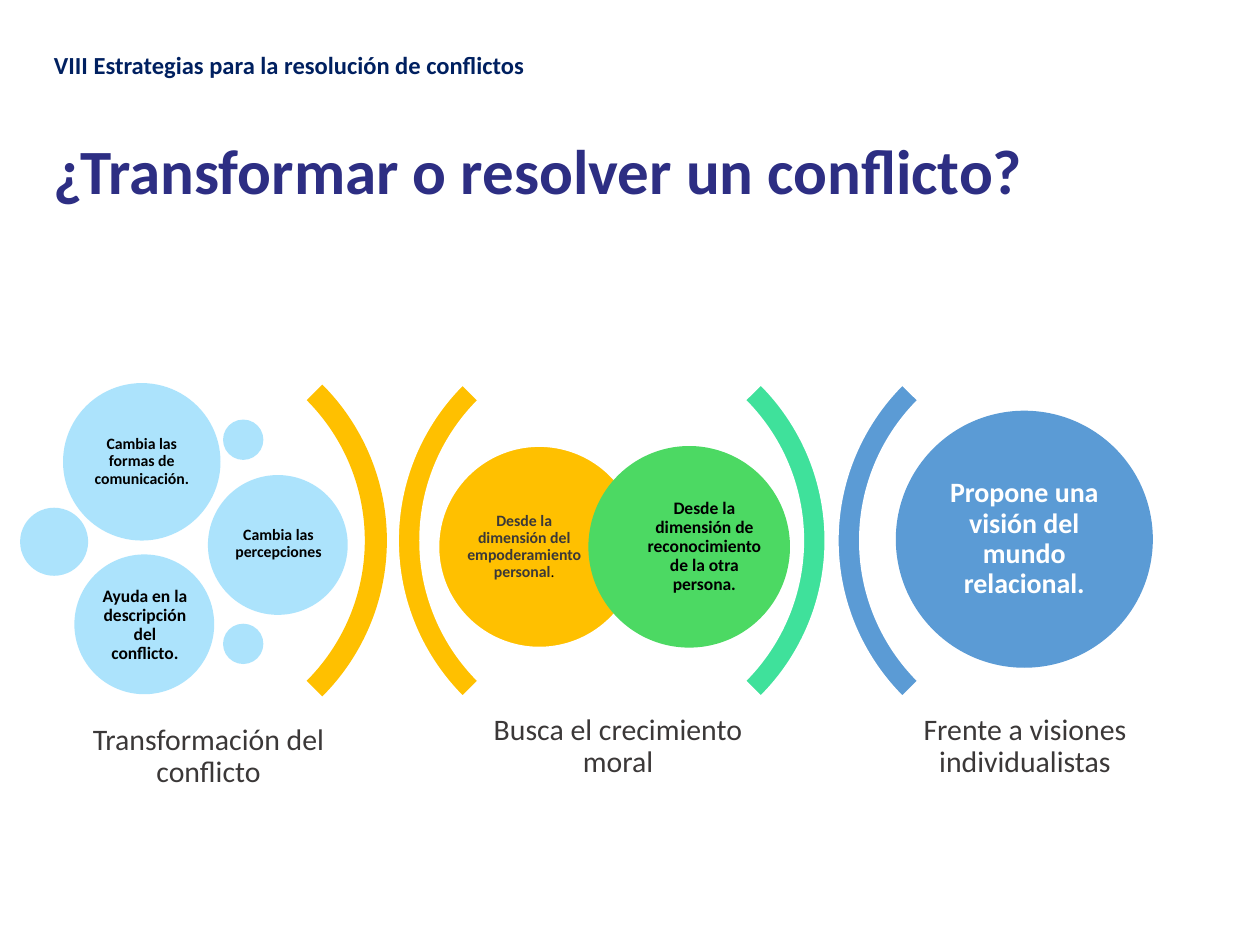
import pptx
import pptx.dml.color
import pptx.enum.shapes
import pptx.enum.text
import pptx.oxml
import pptx.oxml.ns
import pptx.util
from pptx.util import Inches

THEME = {
    "font": "Calibri",
    "title": "2D2E83", "section": "002060", "caption": "3B3838",
    "black": "000000", "white": "FFFFFF",
    "amber": "FFC000", "mint": "3FE19B", "blue": "5B9BD5",
    "green": "4CD963", "sky": "5AC9FB",
    "title_size": 36, "section_size": 14, "caption_size": 17,
    "large": 16, "medium": 10, "small": 9,
}

ARC_SIZE, ARC_TOP = 3.5, 2.54
# left, rotation, colour, white outline
ARCS = [
    (-0.43, 90, "amber", False),
    (3.16, 270, "amber", True),
    (3.05, 90, "mint", True),
    (6.65, 270, "blue", True),
]

# left, top, diameter, colour, opacity percentage, white outline
CIRCLES = [
    (3.48, 3.54, 1.6, "amber", 100, True),
    (4.67, 3.54, 1.6, "green", 100, False),
    (0.5, 3.04, 1.25, "sky", 50, False),
    (0.16, 4.03, 0.54, "sky", 50, False),
    (1.77, 3.33, 0.32, "sky", 50, False),
    (1.65, 3.77, 1.11, "sky", 50, False),
    (1.77, 4.95, 0.32, "sky", 50, False),
    (0.59, 4.4, 1.11, "sky", 50, False),
    (7.11, 3.26, 2.04, "blue", 100, False),
]

# text runs, box, size, colour, inset
CIRCLE_LABELS = [
    ([("Desde la dimensión del empoderamiento personal", "caption", True),
      (".", "black", False)], (3.7, 3.73, 0.92, 1.22), "small", 0),
    ([("Desde la dimensión de reconocimiento de la otra persona.", "black", True)],
     (5.13, 3.73, 0.92, 1.22), "medium", 0),
    ([("Cambia las formas de comunicación.", "black", True)],
     (0.68, 3.22, 0.89, 0.89), "small", 0.04),
    ([("Cambia las percepciones", "black", True)],
     (1.82, 3.93, 0.78, 0.78), "small", 0.04),
    ([("Ayuda en la descripción del conflicto.", "black", True)],
     (0.76, 4.57, 0.78, 0.78), "medium", 0.04),
    ([("Propone una visión del mundo relacional.", "white", True)],
     (7.41, 3.56, 1.44, 1.44), "large", 0.07),
]

CAPTIONS = [
    ("Transformación del conflicto", 0.33, 5.66),
    ("Busca el crecimiento moral", 3.58, 5.58),
    ("Frente a visiones individualistas", 6.81, 5.58),
]
CAPTION_WIDTH, CAPTION_HEIGHT = 2.65, 0.7


def color(name):
    return pptx.dml.color.RGBColor.from_string(THEME[name])


def add_text(slide, runs, box, size, inset=None, centered=True,
             middle=True, line_spacing=0.9):
    """Add a text box; runs are (text, colour name, bold) tuples."""
    shape = slide.shapes.add_textbox(*map(Inches, box))
    frame = shape.text_frame
    frame.word_wrap = True
    if middle:
        frame.vertical_anchor = pptx.enum.text.MSO_ANCHOR.MIDDLE
    if inset is not None:
        frame.margin_left = frame.margin_right = Inches(inset)
        frame.margin_top = frame.margin_bottom = Inches(inset)
    paragraph = frame.paragraphs[0]
    paragraph.line_spacing = line_spacing
    if centered:
        paragraph.alignment = pptx.enum.text.PP_ALIGN.CENTER
    for text, color_name, bold in runs:
        run = paragraph.add_run()
        run.text = text
        run.font.name = THEME["font"]
        run.font.size = pptx.util.Pt(THEME[size])
        run.font.bold = bold
        run.font.color.rgb = color(color_name)


def add_filled_shape(slide, kind, box, fill, opacity=100, outlined=False):
    shape = slide.shapes.add_shape(kind, *map(Inches, box))
    shape.shadow.inherit = False
    shape.fill.solid()
    shape.fill.fore_color.rgb = color(fill)
    if opacity < 100:
        fill_color = shape._element.spPr.find(".//" + pptx.oxml.ns.qn("a:srgbClr"))
        alpha = pptx.oxml.parse_xml(
            f'<a:alpha {pptx.oxml.ns.nsdecls("a")} val="{opacity * 1000}"/>')
        fill_color.append(alpha)
    if outlined:
        shape.line.color.rgb = color("white")
        shape.line.width = pptx.util.Pt(1)
    else:
        shape.line.fill.background()
    return shape


def main():
    presentation = pptx.Presentation()
    presentation.slide_width = Inches(10)
    presentation.slide_height = Inches(7.5)
    slide = presentation.slides.add_slide(presentation.slide_layouts[6])
    shape_kinds = pptx.enum.shapes.MSO_SHAPE

    add_text(slide, [("¿Transformar o resolver un conflicto?", "title", True)],
             (0.33, 0.66, 8.62, 1.45), "title_size", centered=False)
    add_text(slide, [("VIII Estrategias para la resolución de conflictos", "section", True)],
             (0.33, 0.35, 4.94, 0.34), "section_size",
             centered=False, middle=False, line_spacing=1.0)

    for left, rotation, fill, outlined in ARCS:
        arc = add_filled_shape(slide, shape_kinds.BLOCK_ARC,
                               (left, ARC_TOP, ARC_SIZE, ARC_SIZE), fill, outlined=outlined)
        arc.rotation = rotation
        # Start angle, end angle and band thickness of the arc
        for index, value in enumerate((135, 189, 0.05)):
            arc.adjustments[index] = value

    for left, top, diameter, fill, opacity, outlined in CIRCLES:
        add_filled_shape(slide, shape_kinds.OVAL, (left, top, diameter, diameter),
                         fill, opacity, outlined)

    for runs, box, size, inset in CIRCLE_LABELS:
        add_text(slide, runs, box, size, inset)

    for text, left, top in CAPTIONS:
        add_text(slide, [(text, "caption", False)],
                 (left, top, CAPTION_WIDTH, CAPTION_HEIGHT), "caption_size", 0.07)

    presentation.save("out.pptx")


if __name__ == "__main__":
    main()
